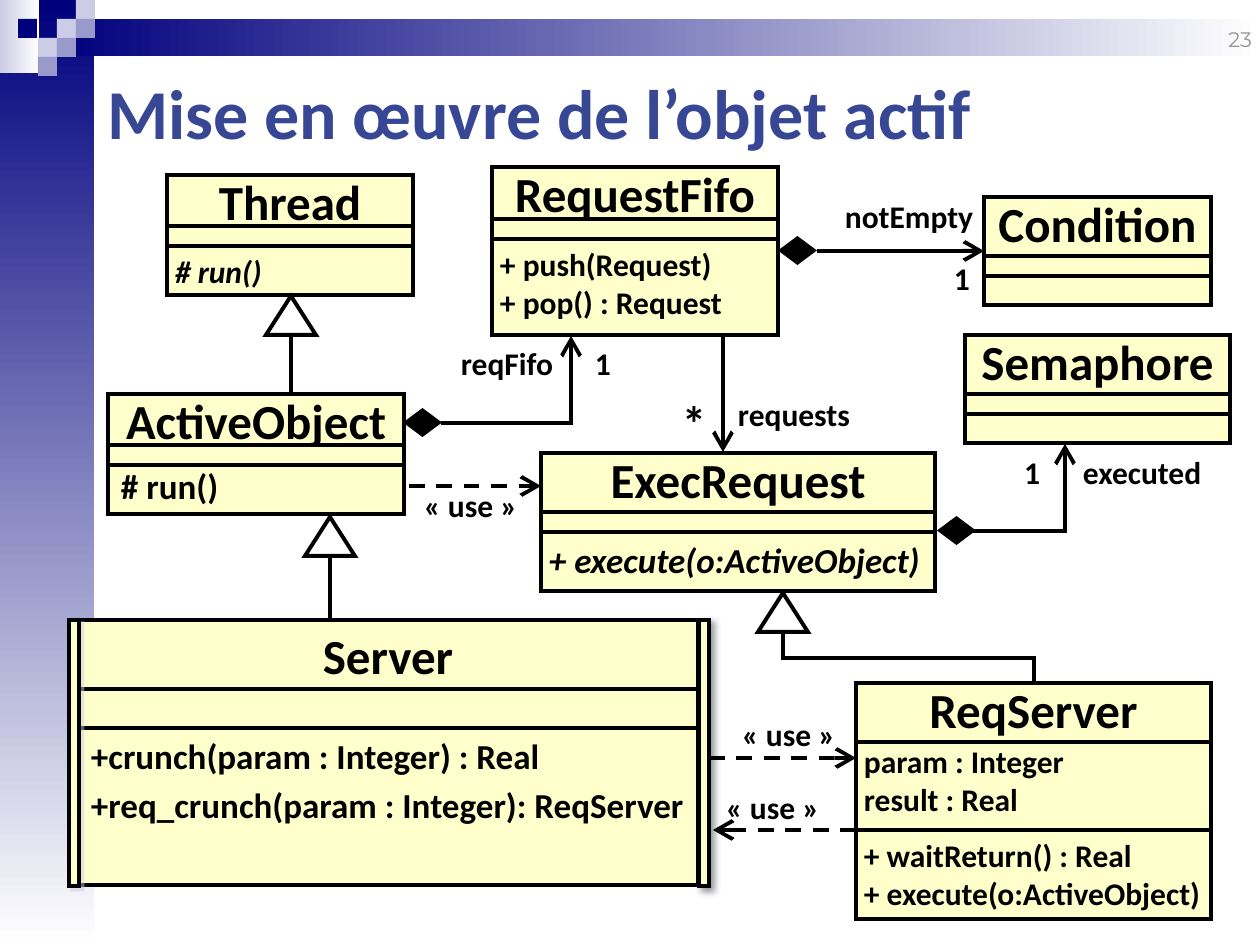
from dataclasses import dataclass
from lxml.etree import SubElement
from pptx import Presentation
from pptx.dml.color import RGBColor as RGB
from pptx.enum.dml import MSO_LINE as DASH
from pptx.enum.shapes import MSO_CONNECTOR as LINK, MSO_SHAPE as KIND
from pptx.enum.text import MSO_ANCHOR as ANCHOR, PP_ALIGN as ALIGN
from pptx.oxml.ns import qn
from pptx.util import Pt


@dataclass(frozen=True)
class Theme:
    font: str = "Calibri"
    page: str = "Montserrat"
    ink: str = "000000"
    paper: str = "FFFFFF"
    card: str = "FFFFCC"
    title: str = "384794"
    navy: str = "00007D"
    pale: str = "CCCCE6"
    mid: str = "9999CC"
    gray: str = "969696"
    head: int = 40
    name: int = 28
    big: int = 20
    text: int = 18
    small: int = 12
    line: float = 2.25


T = Theme()
SCALE = 914400 / 126


def px(n):
    return round(n * SCALE)


def write(frame, text, size=T.text, color=T.ink, font=T.font, bold=True,
          slant=False, align=ALIGN.LEFT, lead=None, pad=(8, 6), wrap=True,
          anchor=ANCHOR.TOP):
    frame.word_wrap = wrap
    frame.vertical_anchor = anchor
    frame.margin_left = frame.margin_right = px(pad[0])
    frame.margin_top = frame.margin_bottom = px(pad[1])
    frame.text = text
    for par in frame.paragraphs:
        par.alignment = align
        face = par.font
        face.name, face.size = font, Pt(size)
        face.bold, face.italic = bold, slant
        face.color.rgb = RGB.from_string(color)
    if lead:
        frame.paragraphs[0].line_spacing = lead


def label(shapes, x, y, w, h, text, **style):
    box = shapes.add_textbox(px(x), px(y), px(w), px(h))
    write(box.text_frame, text, **{"pad": (0, 0), "wrap": False, **style})


def shape(shapes, kind, x, y, w, h, fill, edge=True):
    item = shapes.add_shape(kind, px(x), px(y), px(w), px(h))
    item.shadow.inherit = False
    item.fill.solid()
    item.fill.fore_color.rgb = RGB.from_string(fill)
    if edge:
        stroke(item)
    else:
        item.line.fill.background()
    return item


def fade(shapes, x, y, w, h, start, angle):
    item = shape(shapes, KIND.RECTANGLE, x, y, w, h, start, edge=False)
    item.fill.gradient()
    item.fill.gradient_angle = angle
    for stop, color in zip(item.fill.gradient_stops, (start, T.paper)):
        stop.color.rgb = RGB.from_string(color)


def shade(item, color, alpha, blur, dist):
    effects = item.element.spPr.find(qn("a:effectLst"))
    cast = SubElement(effects, qn("a:outerShdw"), blurRad=str(Pt(blur)),
                      dist=str(Pt(dist)), dir="2700000", algn="ctr", rotWithShape="0")
    tint = SubElement(cast, qn("a:srgbClr"), val=color)
    SubElement(tint, qn("a:alpha"), val=str(alpha * 1000))


def stroke(item, dash=False, arrow=False):
    item.line.color.rgb = RGB.from_string(T.ink)
    item.line.width = Pt(T.line)
    if dash:
        item.line.dash_style = DASH.DASH
    pen = item.element.spPr.find(qn("a:ln"))
    SubElement(pen, qn("a:miter"), lim="800000")
    if arrow:
        SubElement(pen, qn("a:tailEnd"), type="arrow", w="lg", len="lg")


def link(shapes, x1, y1, x2, y2, kind=LINK.STRAIGHT, **style):
    item = shapes.add_connector(kind, px(x1), px(y1), px(x2), px(y2))
    stroke(item, **style)
    SubElement(item.element.spPr, qn("a:effectLst"))
    return item


def drop(shapes, x1, y1, x2, y2):
    wide, tall = x2 - x1, y2 - y1
    item = link(shapes, (x1 + x2 - tall) / 2, (y1 + y2 - wide) / 2,
                (x1 + x2 + tall) / 2, (y1 + y2 + wide) / 2, LINK.ELBOW)
    frame = item.element.spPr.find(qn("a:xfrm"))
    frame.set("rot", "16200000")
    frame.set("flipH", "1")


def rise(shapes, x1, y1, x2, y2):
    pen = shapes.build_freeform(px(x1), px(y1), scale=1.0)
    pen.add_line_segments([(px(x2), px(y1)), (px(x2), px(y2))], close=False)
    item = pen.convert_to_shape()
    item.shadow.inherit = False
    item.fill.background()
    stroke(item, arrow=True)


def card(shapes, x, y, w, name, rows, lead=0.85):
    group = shapes.add_group_shape().shapes
    top = {"size": T.name, "align": ALIGN.CENTER, "lead": lead}
    (first, *rest) = rows
    for high, text, style in [(first, name, top), *rest]:
        part = shape(group, KIND.RECTANGLE, x, y, w, high, T.card)
        if name == text and lead is None:
            shade(part, T.pale, 50, 0, 2.8)
        if text:
            write(part.text_frame, text, **style)
        y += high


def decor(shapes):
    fade(shapes, 0, 0, 94, 945, T.navy, 270)
    fade(shapes, 0, 0, 39, 73, T.pale, 0)
    fade(shapes, 57, 19, 1203, 37, T.navy, 0)
    for x, y, color in [(57, 19, T.pale), (76, 0, T.pale), (76, 19, T.mid),
                        (38, 38, T.pale), (18, 19, T.navy), (57, 38, T.mid),
                        (38, 57, T.mid)]:
        shape(shapes, KIND.RECTANGLE, x, y, 19, 19, color, edge=False)


def cards(shapes):
    gap = (20, "", {})
    wide = {"size": T.big, "pad": (13, 6)}
    card(shapes, 78, 620, 620, "Server",
         [69, (39, "", {}), (157, "+crunch(param : Integer) : Real", wide)], lead=None)
    label(shapes, 78, 777, 620, 55, "+req_crunch(param : Integer): ReqServer",
          **wide, wrap=True)
    for x, color, alpha, blur, dist in [(699, T.ink, 40, 4, 3), (69, T.pale, 50, 0, 2.8)]:
        bar = shape(shapes, KIND.RECTANGLE, x, 620, 10, 266, T.card)
        shade(bar, color, alpha, blur, dist)
    card(shapes, 167, 175, 246, "Thread",
         [51, gap, (49, "# run()", {"slant": True})])
    card(shapes, 108, 394, 296, "ActiveObject",
         [51, gap, (49, "# run()", {**wide, "pad": (13, 0)})])
    card(shapes, 492, 167, 286, "RequestFifo",
         [52, gap, (96, "+ push(Request)\n+ pop() : Request", {})])
    card(shapes, 541, 453, 394, "ExecRequest",
         [59, gap, (59, "+ execute(o:ActiveObject)", {"size": T.big, "slant": True})])
    card(shapes, 984, 197, 227, "Condition", [59, gap, (29, "", {})])
    card(shapes, 965, 335, 265, "Semaphore", [59, gap, (29, "", {})])
    card(shapes, 856, 683, 355, "ReqServer",
         [59, (88, "param : Integer\nresult : Real", {"lead": Pt(16), "pad": (8, 10)}),
          (89, "+ waitReturn() : Real\n+ execute(o:ActiveObject)", {})])


def links(shapes):
    for x, y in [(403, 408), (778, 236), (937, 516)]:
        shape(shapes, KIND.DIAMOND, x, y, 39, 29, T.ink, edge=False)
    for x, y in [(305, 517), (266, 296), (758, 593)]:
        shape(shapes, KIND.ISOSCELES_TRIANGLE, x, y, 50, 39, T.paper)
    link(shapes, 291, 336, 291, 394)
    link(shapes, 330, 557, 330, 620)
    link(shapes, 723, 336, 723, 452, arrow=True)
    link(shapes, 817, 251, 984, 251, arrow=True)
    for x1, x2, y in [(709, 856, 758), (856, 713, 830), (409, 541, 486)]:
        link(shapes, x1, y, x2, y, dash=True, arrow=True)
    drop(shapes, 783, 633, 1034, 683)
    rise(shapes, 441, 423, 571, 336)
    rise(shapes, 972, 531, 1065, 444)


def labels(shapes):
    for x, y, w, text in [(742, 715, 100, "« use »"), (726, 788, 100, "« use »"),
                          (424, 486, 100, "« use »"), (738, 395, 130, "requests"),
                          (461, 344, 100, "reqFifo"), (595, 344, 20, "1"),
                          (845, 197, 136, "notEmpty"), (954, 259, 20, "1"),
                          (1083, 453, 136, "executed"), (1024, 453, 20, "1")]:
        label(shapes, x, y, w, 38, text, wrap=True)
    label(shapes, 682, 393, 30, 59, "*", size=T.name, wrap=True)
    label(shapes, 1202, 27, 50, 25, "23", size=T.small, font=T.page, bold=False,
          color=T.gray, align=ALIGN.RIGHT, anchor=ANCHOR.MIDDLE, wrap=True)


def main():
    deck = Presentation()
    deck.slide_width, deck.slide_height = px(1260), px(945)
    shapes = deck.slides.add_slide(deck.slide_layouts[5]).shapes
    title = shapes.title
    title.left, title.top, title.width, title.height = map(px, (94, 64, 1147, 95))
    write(title.text_frame, "Mise en œuvre de l’objet actif", size=T.head,
          color=T.title, pad=(13, 6), anchor=ANCHOR.MIDDLE)
    for draw in (decor, cards, links, labels):
        draw(shapes)
    deck.save("out.pptx")


if __name__ == "__main__":
    main()
